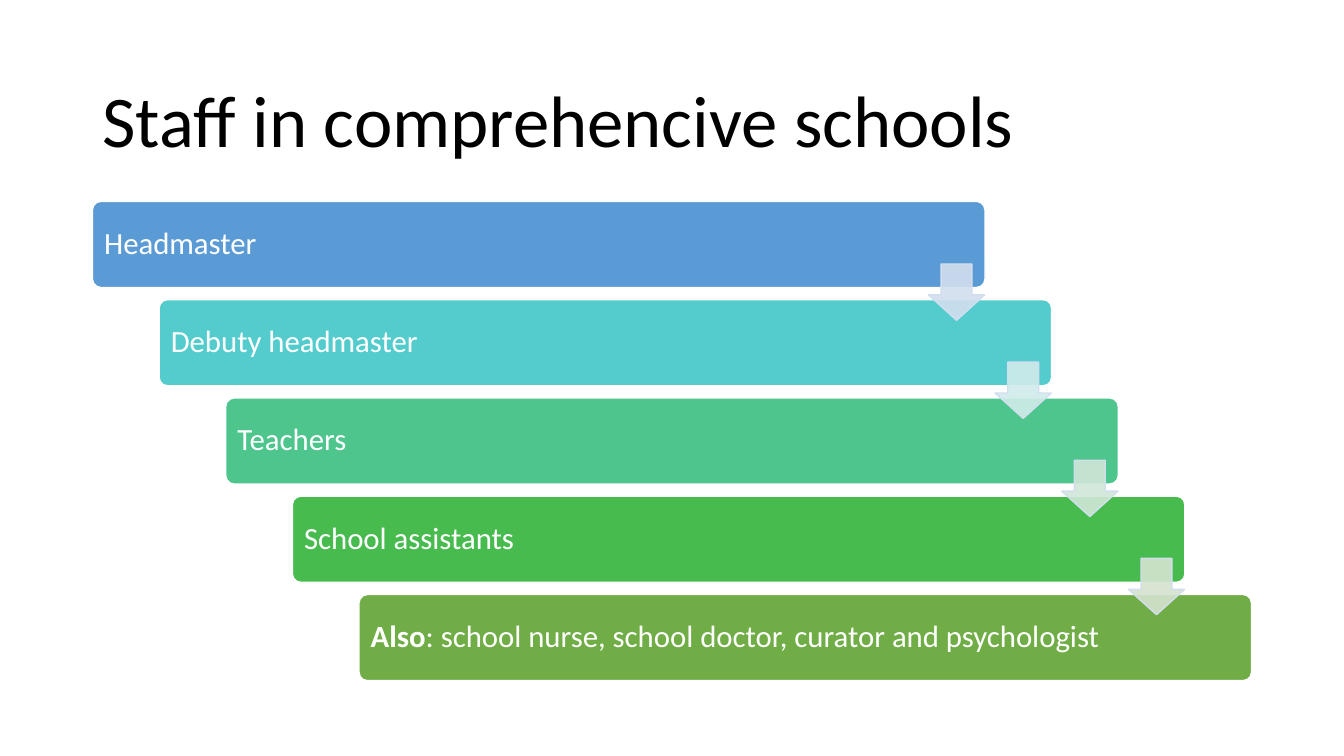
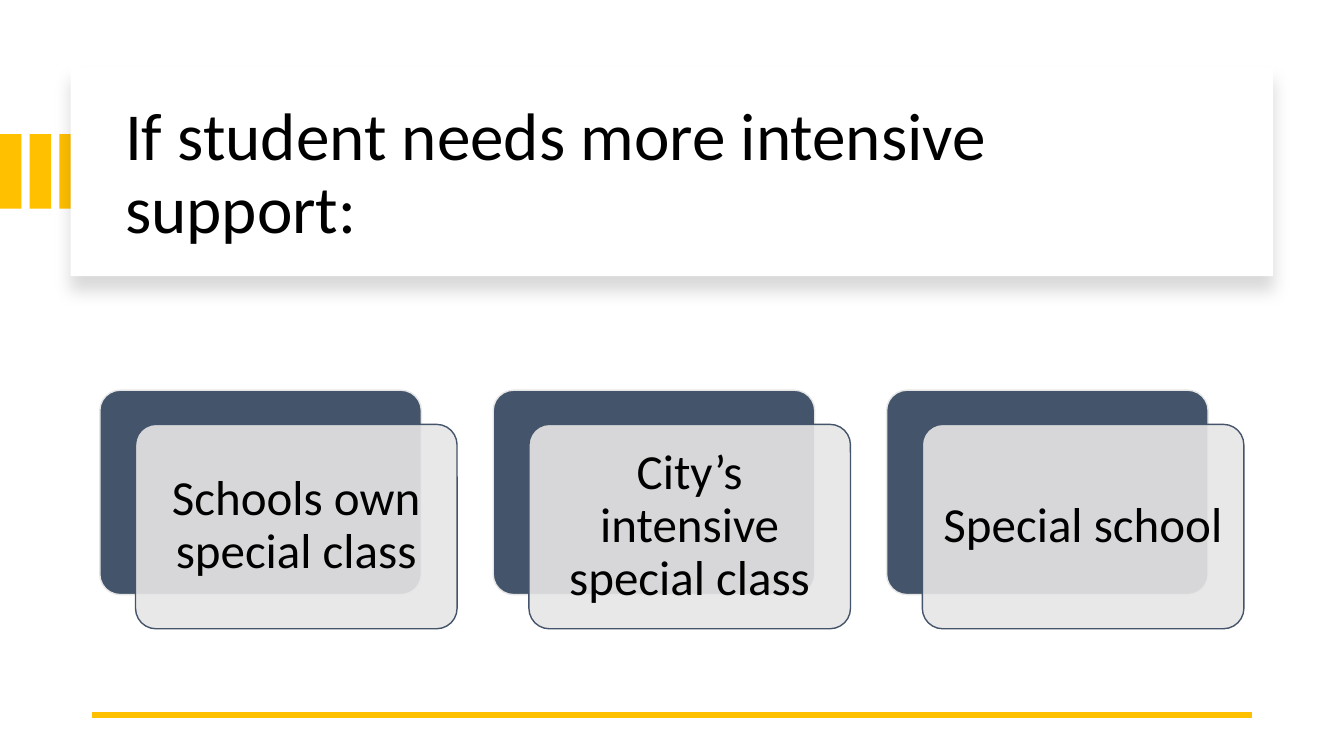
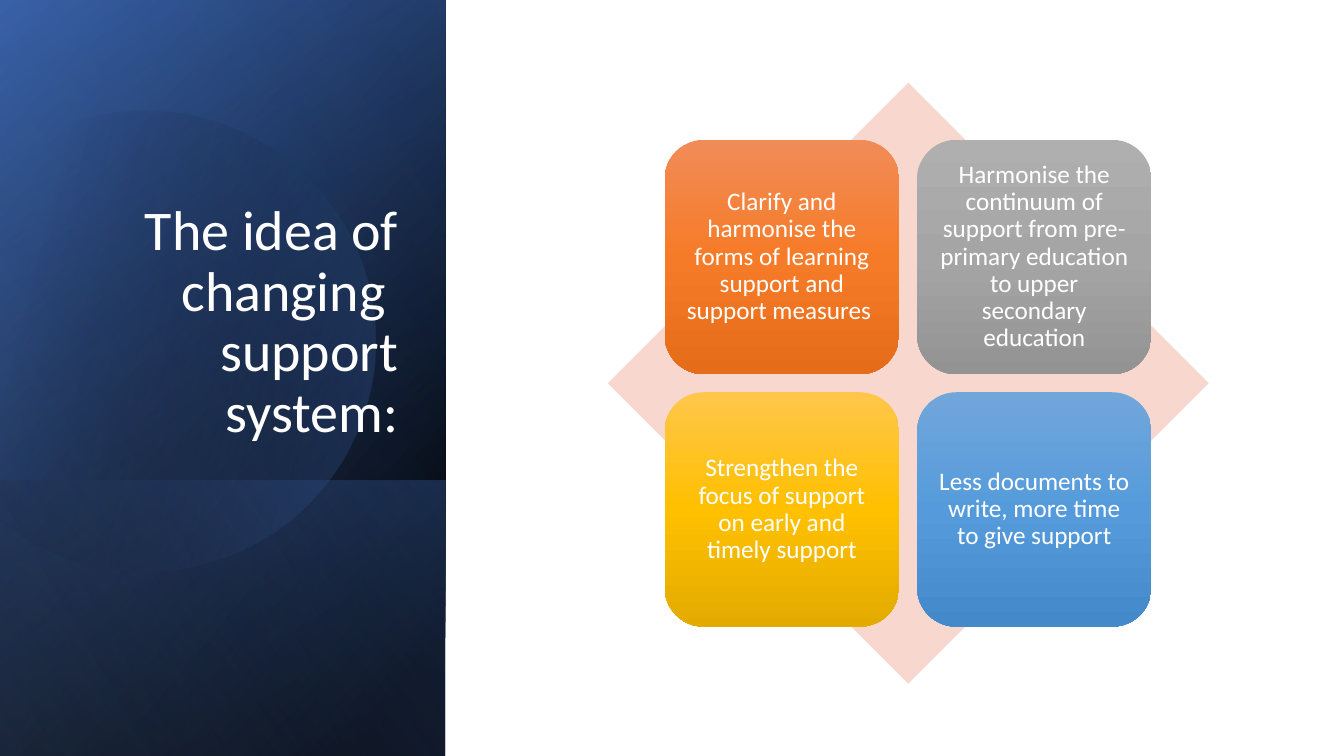
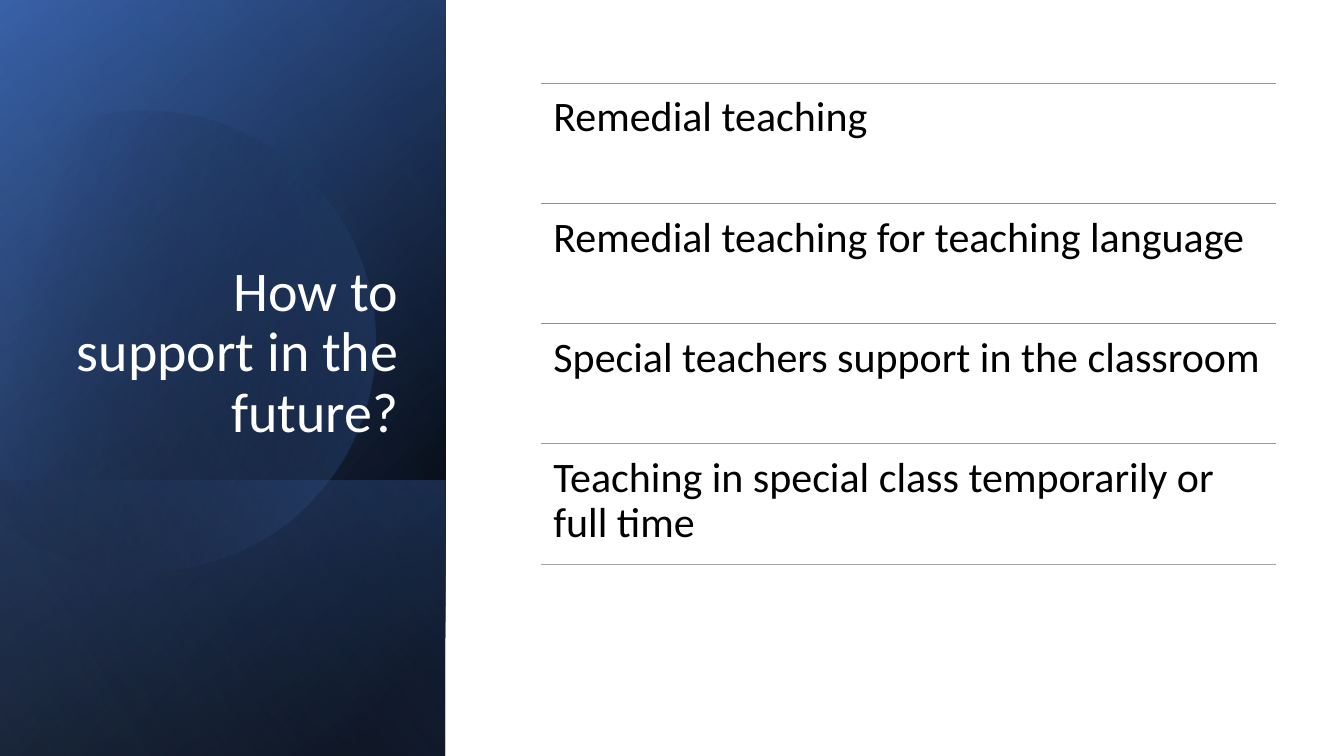
"""Build four slides about school staff and learning support."""
import math
from dataclasses import dataclass

from lxml import etree
from pptx import Presentation
from pptx import util as u
from pptx.dml.color import RGBColor
from pptx.enum import shapes, text
from pptx.oxml import ns, parse_xml

Pt = u.Pt
KIND = shapes.MSO_SHAPE
ALIGN = text.PP_ALIGN
ANCHOR = text.MSO_ANCHOR


@dataclass(frozen=True)
class Theme:
    font: str = "Calibri"
    white: str = "FFFFFF"
    black: str = "000000"
    gold: str = "FFC000"
    slate: str = "44546A"
    silver: str = "E7E6E6"
    blue: str = "4472C4"
    navy: str = "2F5597"
    sky: str = "8FAADC"
    blush: str = "F8D7CE"
    arrow_line: str = "D2DEEF"
    steps: tuple = ("5B9BD5", "54CCCD", "4DC58D", "48BB4F", "70AD47")
    arrows: tuple = ("D2DEEF", "D0ECEA", "D0E7D8", "D5E3CF")
    tiles: tuple = (("F18C57", "F67B28", "E56C19"), ("AFAFAF", "A5A5A5", "939393"),
                    ("FFC64B", "FFC000", "E3AB00"), ("71A6DB", "559BDB", "448ACA"))
    rules: tuple = ("ED7D31", "D87A51", "C48170", "B4908B", "A5A5A5")
    title_large: float = 52
    title_medium: float = 48
    title_side: float = 40
    card_size: float = 35
    list_size: float = 30
    step_size: float = 22
    tile_size: float = 18


T = Theme()


def paint(sp, *stops, angle=90, line=None):
    sp.shadow.inherit = False
    if len(stops) == 1:
        color, alpha = stops[0]
        sp.fill.solid()
        sp.fill.fore_color.rgb = RGBColor.from_string(color)
        if alpha < 100:
            clr = sp._element.spPr.find(ns.qn("a:solidFill"))[0]
            etree.SubElement(clr, ns.qn("a:alpha"), val=str(alpha * 1000))
    else:
        sp.fill.background()
        gs = "".join(
            f'<a:gs pos="{pos * 1000}"><a:srgbClr val="{color}">'
            f'<a:alpha val="{alpha * 1000}"/></a:srgbClr></a:gs>'
            for pos, color, alpha in stops)
        grad = parse_xml(
            f'<a:gradFill {ns.nsdecls("a")} rotWithShape="1"><a:gsLst>{gs}</a:gsLst>'
            f'<a:lin ang="{angle * 60000}" scaled="0"/></a:gradFill>')
        spPr = sp._element.spPr
        spPr.replace(spPr.find(ns.qn("a:noFill")), grad)
    if line:
        sp.line.color.rgb = RGBColor.from_string(line)
        sp.line.width = Pt(1)
    else:
        sp.line.fill.background()


def write(sp, words, size, color, align=ALIGN.LEFT, anchor=ANCHOR.MIDDLE,
          margins=(7.2, 3.6), lead=""):
    tf = sp.text_frame
    tf.word_wrap = True
    tf.auto_size = text.MSO_AUTO_SIZE.NONE
    tf.vertical_anchor = anchor
    tf.margin_left = tf.margin_right = Pt(margins[0])
    tf.margin_top = tf.margin_bottom = Pt(margins[1])
    p = tf.paragraphs[0]
    p.text = lead or words
    if lead:
        p.runs[0].font.bold = True
        p.add_run().text = words
    p.alignment = align
    p.line_spacing = 0.9
    for r in p.runs:
        r.font.name = T.font
        r.font.size = Pt(size)
        r.font.color.rgb = RGBColor.from_string(color)


prs = Presentation()
prs.slide_width, prs.slide_height = Pt(960), Pt(540)
slides = [prs.slides.add_slide(prs.slide_layouts[5]) for _ in range(4)]
staff, intensive, idea, future = slides

for i in range(3):
    bar = intensive.shapes.add_shape(KIND.RECTANGLE, Pt(21.2 * i), Pt(95.8), Pt(15.3), Pt(53.3))
    paint(bar, (T.gold, 100))
panel = intensive.shapes.add_shape(KIND.RECTANGLE, Pt(50.4), Pt(48), Pt(859), Pt(149.2))
paint(panel, (T.white, 100))
panel._element.spPr.find(ns.qn("a:effectLst")).append(parse_xml(
    f'<a:outerShdw {ns.nsdecls("a")} blurRad="{Pt(11)}" dist="{Pt(10)}" dir="5400000" '
    f'algn="t" rotWithShape="0"><a:srgbClr val="{T.black}"><a:alpha val="15000"/>'
    '</a:srgbClr></a:outerShdw>'))

side = 318.2
layers = [
    (540, 50, (8, T.black, 100), (100, T.navy, 100)),
    (540, 30, (0, T.black, 0), (99, T.blue, 46)),
    (197, 130, (2, T.blue, 29), (100, T.black, 30)),
    (None, 30, (29, T.black, 0), (100, T.blue, 43)),
    (540, 120, (0, T.black, 0), (99, T.sky, 11)),
]

cx, cy, radius = 103.3, 240.8, 164.5
bends = [math.radians(a) for a in (-118, -90, 0, 90, 150)]
curve = [(cx + radius * math.cos(bends[0]), cy + radius * math.sin(bends[0]))]
for a, b in zip(bends, bends[1:]):
    pull = 4 / 3 * math.tan((b - a) / 4)
    for angle, k in ((a, pull), (b, -pull), (b, 0)):
        curve.append((cx + radius * (math.cos(angle) - k * math.sin(angle)),
                      cy + radius * (math.sin(angle) + k * math.cos(angle))))
curve = [(Pt(x), Pt(y)) for x, y in curve]

for s in (idea, future):
    for length, angle, *stops in layers:
        if length:
            sp = s.shapes.add_shape(KIND.RECTANGLE, Pt((side - length) / 2),
                                    Pt(540 - (length + side) / 2), Pt(length), Pt(side))
            sp.rotation = 90
            sp._element.spPr.find(ns.qn("a:xfrm")).set("flipH", "1")
        else:
            outline = s.shapes.build_freeform(*curve[0], scale=1.0)
            outline.add_line_segments(curve[1:], close=True)
            sp = outline.convert_to_shape()
            sp.rotation = 343.9
            segments = list(sp._element.iter(ns.qn("a:lnTo")))
            for n in range(0, len(segments), 3):
                bezier = etree.Element(ns.qn("a:cubicBezTo"))
                segments[n].addprevious(bezier)
                for segment in segments[n:n + 3]:
                    bezier.append(segment[0])
                    segment.getparent().remove(segment)
        paint(sp, *stops, angle=angle)

side_title = ((46.1, 132.5, 245.5, 188.6), T.title_side, T.white, ALIGN.RIGHT, ANCHOR.BOTTOM)
titles = [
    ("Staff in comprehencive schools", (66, 43.9, 828, 89.3), T.title_large, T.black),
    ("If student needs more intensive support:", (82.1, 64.1, 801.4, 122.4),
     T.title_medium, T.black),
    ("The idea of changing  support system:", *side_title),
    ("How to support in the future?", *side_title),
]
for s, (words, at, *style) in zip(slides, titles):
    title = s.shapes.title
    title.left, title.top, title.width, title.height = map(Pt, at)
    write(title, words, *style)
    s.shapes._spTree.append(title._element)

staff_rows = [("", "Headmaster"), ("", "Debuty headmaster"), ("", "Teachers"),
              ("", "School assistants"),
              ("Also", ": school nurse, school doctor, curator and psychologist")]
for i, ((lead, words), color) in enumerate(zip(staff_rows, T.steps)):
    step = staff.shapes.add_shape(KIND.ROUNDED_RECTANGLE, Pt(66 + 47.6 * i),
                                  Pt(143.8 + 70.2 * i), Pt(637.6), Pt(61.6))
    step.adjustments[0] = 0.1
    paint(step, (color, 100), line=T.white)
    write(step, words, T.step_size, T.white, margins=(6.6, 6.6), lead=lead)
for i, color in enumerate(T.arrows):
    arrow = staff.shapes.add_shape(KIND.DOWN_ARROW, Pt(663.2 + 47.6 * i),
                                   Pt(188.6 + 70.1 * i), Pt(40.2), Pt(40.2))
    arrow.adjustments[0], arrow.adjustments[1] = 0.55, 0.45
    paint(arrow, (color, 90), line=T.arrow_line)

places = ["Schools own special class", "City’s intensive special class", "Special school"]
for i, words in enumerate(places):
    x, y = 71.3 + 281 * i, 278.7
    for dx, dy, fill, line in ((0, 0, (T.slate, 100), T.silver),
                               (25.5, 24.4, (T.silver, 90), T.slate)):
        card = intensive.shapes.add_shape(KIND.ROUNDED_RECTANGLE, Pt(x + dx), Pt(y + dy),
                                          Pt(229.7), Pt(146))
        card.adjustments[0] = 0.1
        paint(card, fill, line=line)
    write(card, words, T.card_size, T.black, ALIGN.CENTER, margins=(10.5, 10.5))

diamond = idea.shapes.add_shape(KIND.DIAMOND, Pt(434.2), Pt(59.1), Pt(429.2), Pt(429.2))
paint(diamond, (T.blush, 100))
goals = [
    "Clarify and harmonise the forms of learning support and support measures ",
    "Harmonise the continuum of support from pre-primary education to upper secondary education",
    "Strengthen the focus of support on early and timely support",
    "Less documents to write, more time to give support",
]
for i, (words, colors) in enumerate(zip(goals, T.tiles)):
    row, col = divmod(i, 2)
    tile = idea.shapes.add_shape(KIND.ROUNDED_RECTANGLE, Pt(474.8 + 180.3 * col),
                                 Pt(99.9 + 180.3 * row), Pt(167.4), Pt(167.4))
    paint(tile, *((50 * n, color, 100) for n, color in enumerate(colors)))
    write(tile, words, T.tile_size, T.white, ALIGN.CENTER, margins=(5.6, 5.6))

supports = ["Remedial teaching", "Remedial teaching for teaching language",
            "Special teachers support in the classroom",
            "Teaching in special class temporarily or full time"]
left, top, pitch = 386.3, 59.2, 85.9
for i, words in enumerate(supports):
    item = future.shapes.add_textbox(Pt(left), Pt(top + pitch * i), Pt(525), Pt(pitch))
    write(item, words, T.list_size, T.black, anchor=ANCHOR.TOP, margins=(9, 9))

rules = [(intensive, 894, 66, 510.5, T.gold, 4.5)]
rules += [(future, left, left + 525, top + pitch * i, color, 0.5)
          for i, color in enumerate(T.rules)]
for s, x1, x2, y, color, width in rules:
    rule = s.shapes.add_connector(shapes.MSO_CONNECTOR.STRAIGHT, Pt(x1), Pt(y), Pt(x2), Pt(y))
    rule.line.color.rgb = RGBColor.from_string(color)
    rule.line.width = Pt(width)
    etree.SubElement(rule._element.spPr, ns.qn("a:effectLst"))

prs.save("out.pptx")
